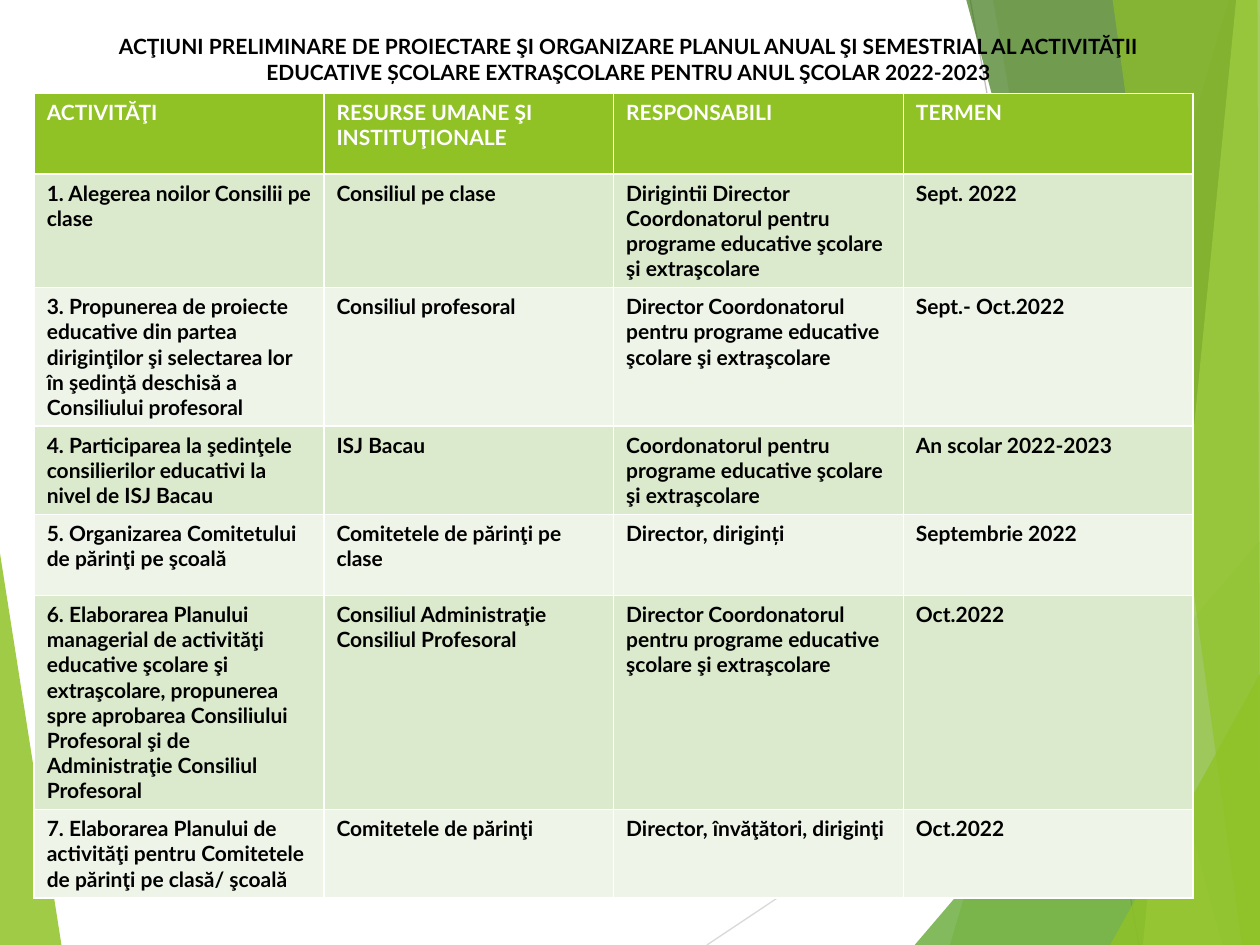
"""Build a slide with a table of school planning activities over green facets."""
from lxml.etree import SubElement
from pptx import Presentation
from pptx.dml.color import RGBColor as Rgb
from pptx.enum.shapes import MSO_CONNECTOR as Link
from pptx.enum.text import PP_ALIGN as Align
from pptx.oxml.ns import qn
from pptx.util import Cm, Pt

FONT = "Lato"
WIDE, HIGH = 25.4, 19.05
HUES = {
    "lime": "90C226", "leaf": "54A021", "pine": "3F7819", "pale": "C0E474",
    "mint": "DBE9CD", "mist": "EEF4E8", "white": "FFFFFF", "black": "000000",
    "silver": "D9D9D9", "grey": "BFBFBF",
}
TITLE = (
    "ACŢIUNI PRELIMINARE DE PROIECTARE ŞI ORGANIZARE PLANUL ANUAL ŞI SEMESTRIAL "
    "AL ACTIVITĂŢII EDUCATIVE ȘCOLARE EXTRAŞCOLARE PENTRU ANUL ŞCOLAR 2022-2023"
)
COORD = "Coordonatorul pentru programe educative şcolare şi extraşcolare"
ROWS = [
    ("ACTIVITĂŢI", "RESURSE UMANE ŞI INSTITUŢIONALE", "RESPONSABILI", "TERMEN"),
    ("1. Alegerea noilor Consilii pe clase", "Consiliul pe clase",
     f"Dirigintii Director {COORD}", "Sept. 2022"),
    ("3. Propunerea de proiecte educative din partea diriginţilor şi selectarea "
     "lor în şedinţă deschisă a Consiliului profesoral", "Consiliul profesoral",
     f"Director {COORD}", "Sept.- Oct.2022"),
    ("4. Participarea la şedinţele consilierilor educativi la nivel de ISJ Bacau",
     "ISJ Bacau", COORD, "An scolar 2022-2023"),
    ("5. Organizarea Comitetului de părinţi pe şcoală",
     "Comitetele de părinţi pe clase", "Director, diriginți", "Septembrie 2022"),
    ("6. Elaborarea Planului managerial de activităţi educative şcolare şi "
     "extraşcolare, propunerea spre aprobarea Consiliului Profesoral şi de "
     "Administraţie Consiliul Profesoral",
     "Consiliul Administraţie Consiliul Profesoral",
     f"Director {COORD}", "Oct.2022"),
    ("7. Elaborarea Planului de activităţi pentru Comitetele de părinţi pe clasă/ "
     "şcoală", "Comitetele de părinţi", "Director, învăţători, diriginţi",
     "Oct.2022"),
]
LINES = [
    ("silver", (14.25, HIGH), (WIDE, 11.61)),
    ("grey", (19.56, 0), (22.96, HIGH)),
]
FACETS = [
    ("lime", 85, [(0, 11.15), (1.24, HIGH), (0, HIGH)]),
    ("lime", 30, [(24.77, 0), (19.15, HIGH), (WIDE, HIGH), (WIDE, 0)]),
    ("lime", 20, [(20.02, 0), (23.34, HIGH), (WIDE, HIGH), (WIDE, 0)]),
    ("leaf", 72, [(18.44, HIGH), (WIDE, 10.9), (WIDE, HIGH)]),
    ("pine", 70, [(19.48, 0), (24.64, HIGH), (WIDE, HIGH), (WIDE, 0)]),
    ("pale", 70, [(24.92, 0), (23.04, HIGH), (WIDE, HIGH), (WIDE, 0)]),
    ("lime", 65, [(22.43, 0), (25.04, HIGH), (WIDE, HIGH), (25.35, 0)]),
    ("lime", 80, [(22.38, HIGH), (WIDE, 13.59), (WIDE, HIGH)]),
]


def paint(fill, hue):
    fill.solid()
    fill.fore_color.rgb = Rgb.from_string(HUES[hue])


def write(frame, text, hue):
    frame.text = text
    for run in frame.paragraphs[0].runs:
        font = run.font
        font.name, font.size, font.bold = FONT, Pt(12), True
        font.color.rgb = Rgb.from_string(HUES[hue])


def add_line(slide, hue, start, end):
    line = slide.shapes.add_connector(
        Link.STRAIGHT, *(Cm(n) for n in start + end))
    line.line.width = Pt(0.75)
    paint(line.line.fill, hue)
    SubElement(line.element.spPr, qn("a:effectLst"))


def add_facet(slide, hue, alpha, spots):
    first, *rest = [(Cm(x), Cm(y)) for x, y in spots]
    pen = slide.shapes.build_freeform(*first)
    pen.add_line_segments(rest)
    facet = pen.convert_to_shape()
    facet.shadow.inherit = False
    facet.line.fill.background()
    paint(facet.fill, hue)
    for tone in facet.element.spPr.iter(qn("a:srgbClr")):
        SubElement(tone, qn("a:alpha"), val=str(alpha * 1000))


def add_title(slide):
    frame = slide.shapes.add_textbox(
        Cm(1.7), Cm(0.56), Cm(21.95), Cm(1.55)).text_frame
    frame.word_wrap = True
    write(frame, TITLE, "black")
    frame.paragraphs[0].alignment = Align.CENTER


def add_grid(slide):
    rows, cols = len(ROWS), len(ROWS[0])
    grid = slide.shapes.add_table(
        rows, cols, Cm(0.69), Cm(1.88), Cm(5.84 * cols), Cm(1.63 * rows)).table
    for r, row in enumerate(ROWS):
        back = ("mint" if r % 2 else "mist") if r else "lime"
        for c, text in enumerate(row):
            cell = grid.cell(r, c)
            paint(cell.fill, back)
            write(cell.text_frame, text, "black" if r else "white")


def main():
    deck = Presentation()
    deck.slide_width, deck.slide_height = Cm(WIDE), Cm(HIGH)
    slide = deck.slides.add_slide(deck.slide_layouts[6])
    paint(slide.background.fill, "white")
    for line in LINES:
        add_line(slide, *line)
    for facet in FACETS:
        add_facet(slide, *facet)
    add_title(slide)
    add_grid(slide)
    deck.save("out.pptx")


if __name__ == "__main__":
    main()
